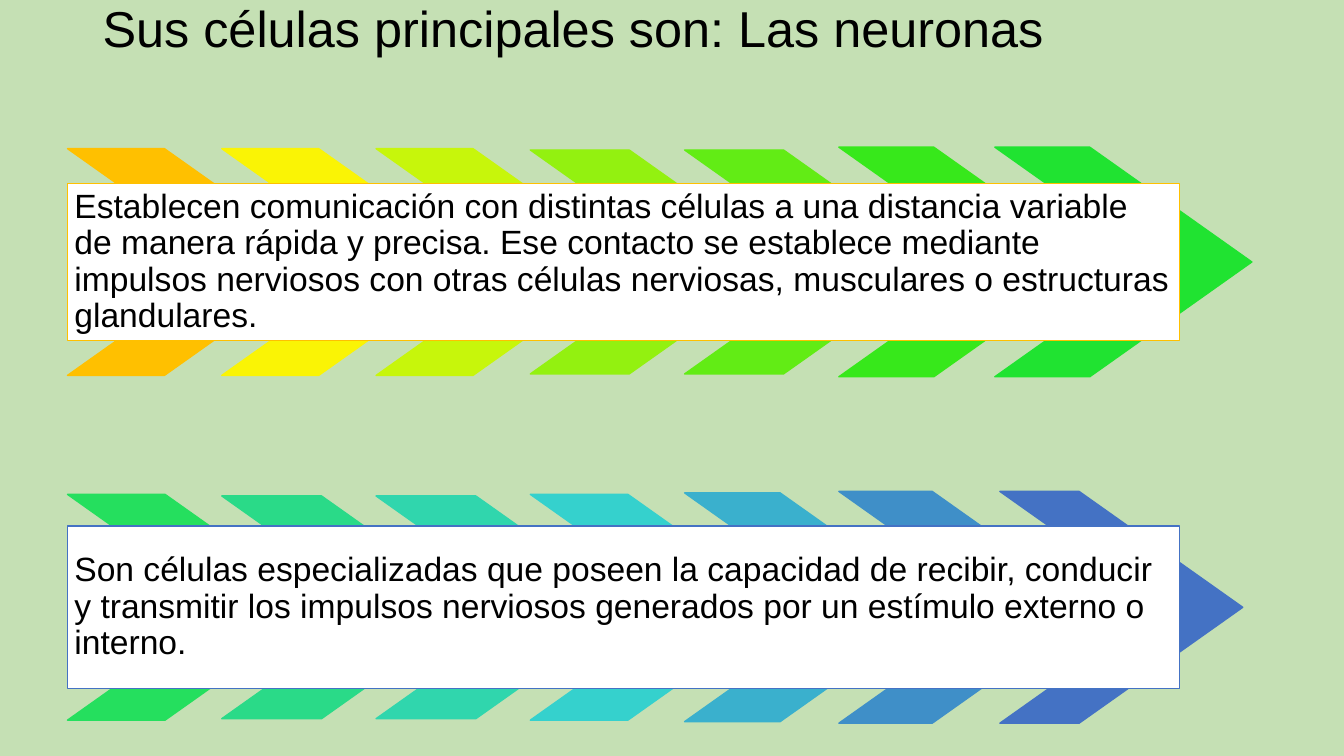
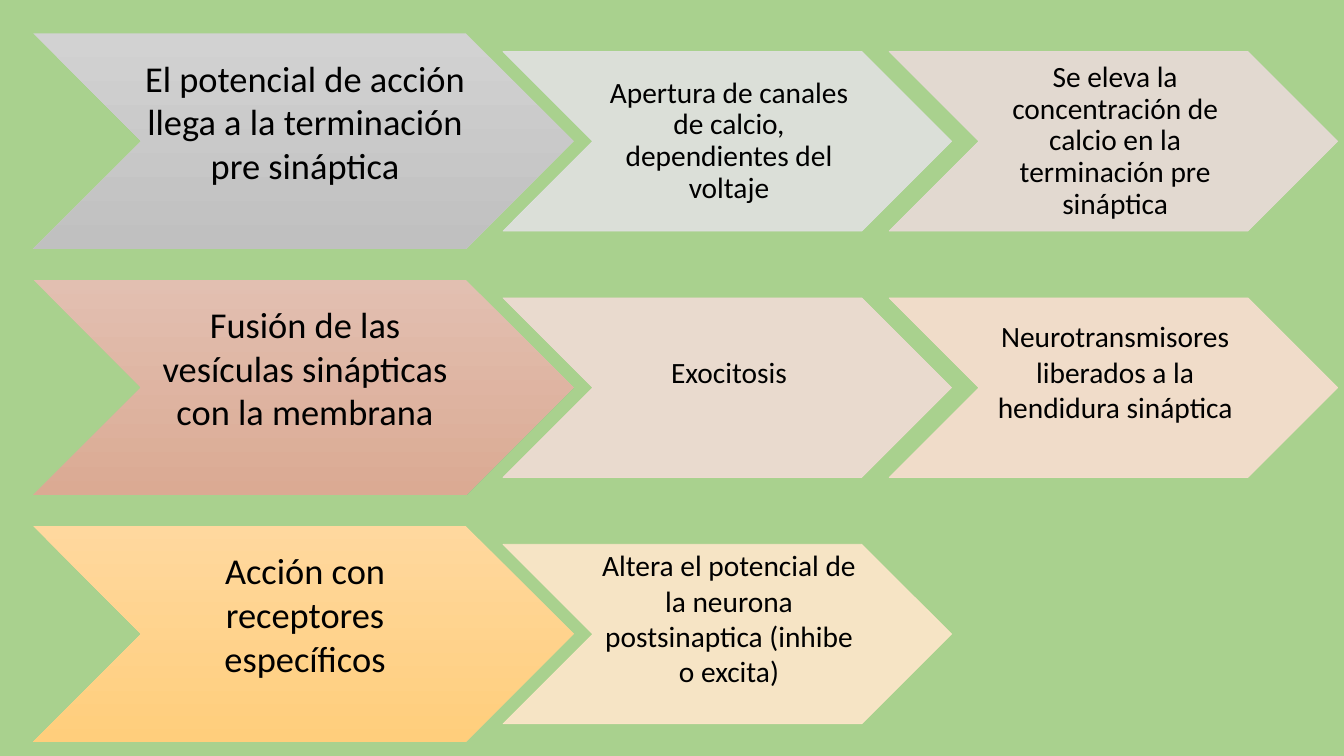
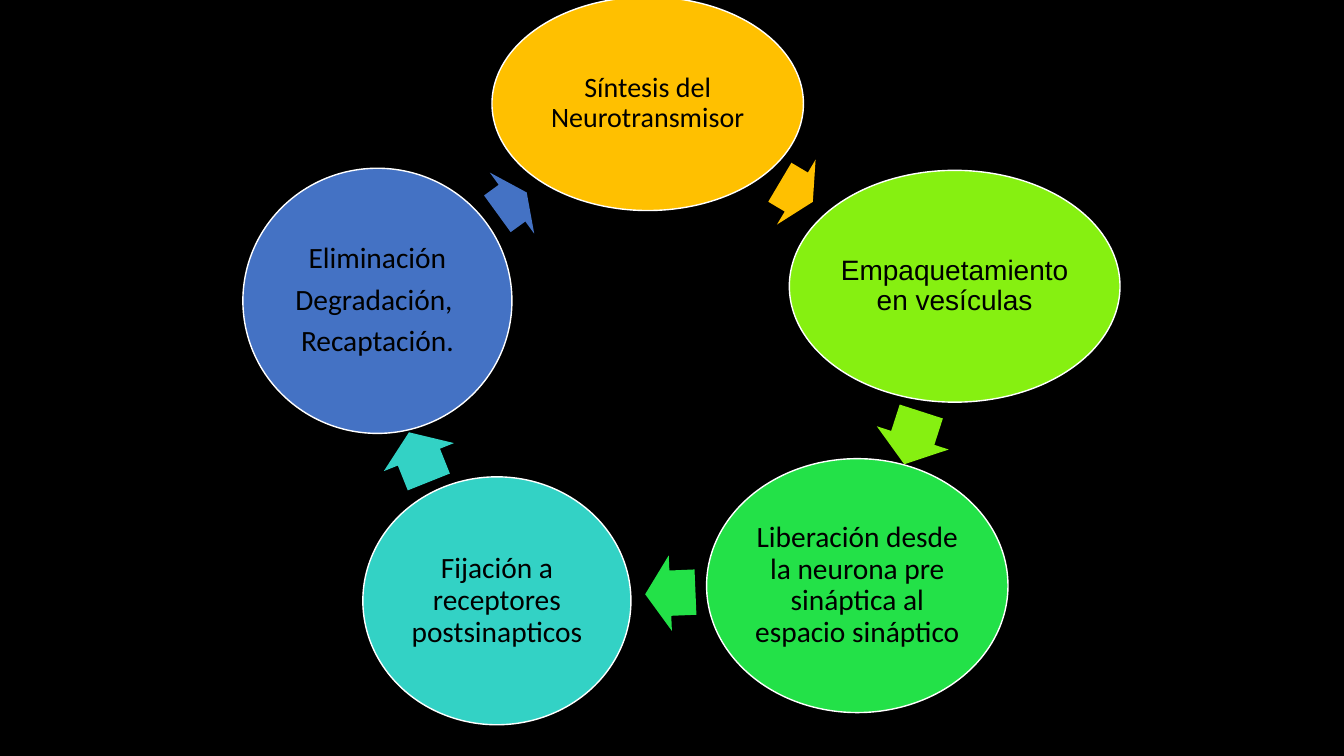
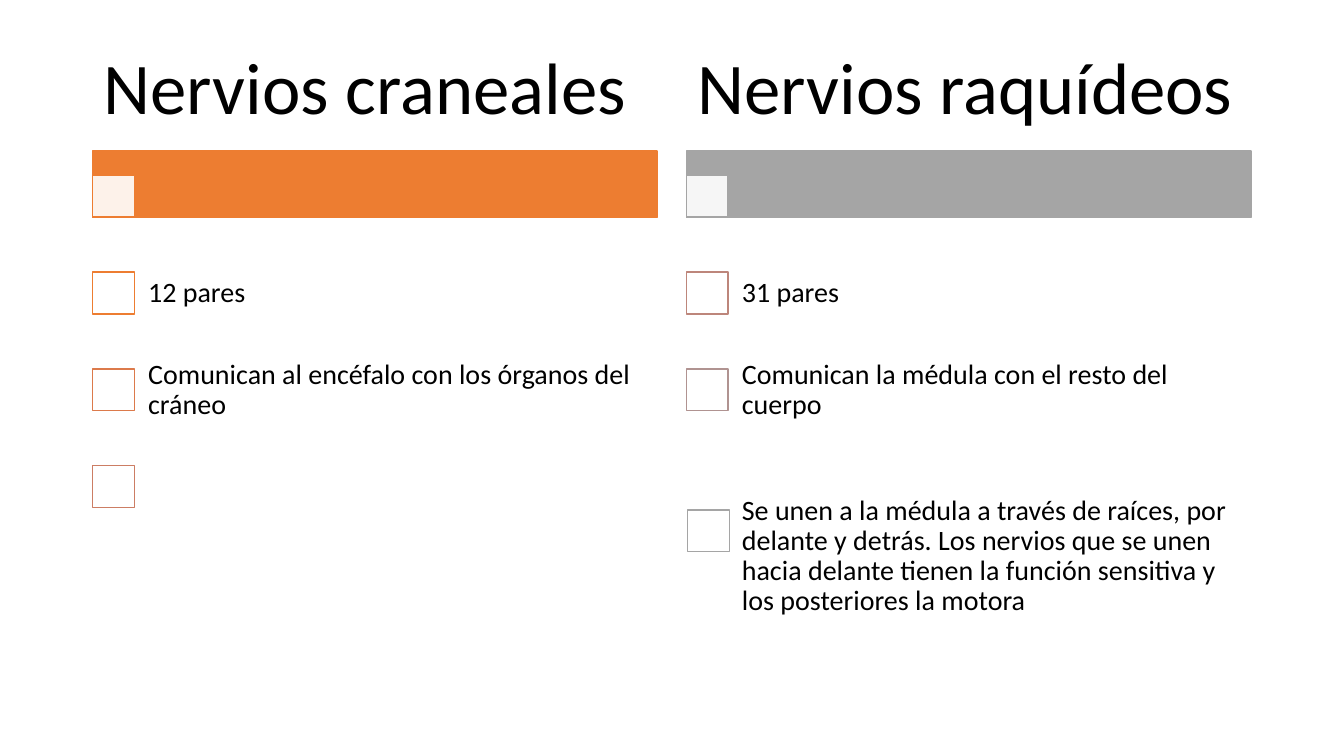
from dataclasses import dataclass
from typing import Optional

from pptx import Presentation
from pptx.dml.color import RGBColor
from pptx.enum.shapes import MSO_SHAPE as Preset
from pptx.enum.text import MSO_ANCHOR as Anchor, PP_ALIGN as Align
from pptx.oxml.ns import qn
from pptx.shapes.autoshape import Shape
from pptx.slide import Slide
from pptx.util import Pt


@dataclass(frozen=True)
class Theme:
    sans: str = "Arial"
    body: str = "Calibri"
    ink: str = "000000"
    paper: str = "FFFFFF"
    pale_green: str = "C5E0B4"
    green: str = "A9D18E"
    amber: str = "FFC000"
    blue: str = "4472C4"
    orange: str = "ED7D31"
    grey: str = "A5A5A5"
    heading: float = 52
    title: float = 36
    step: float = 26
    statement: float = 24
    detail: float = 21
    note: float = 20
    tight: float = 0.9


T = Theme()


@dataclass(frozen=True)
class Box:
    x: float
    y: float
    w: float
    h: float


@dataclass(frozen=True)
class Statement:
    text: str
    box: Box
    line: str
    colours: tuple[str, ...]
    heights: tuple[float, ...]
    last_x: float
    last_w: float


@dataclass(frozen=True)
class Step:
    text: str
    colour: str
    colour_end: Optional[str] = None
    raised: bool = True


@dataclass(frozen=True)
class Stage:
    lines: tuple[str, ...]
    colour: str
    oval: Box
    arrow: Box
    turn: float
    size: float = T.detail
    font: str = T.body


@dataclass(frozen=True)
class Item:
    text: str
    line: str
    check_y: float
    text_y: float
    text_h: float = 69.1
    dx: float = 0


@dataclass(frozen=True)
class NerveColumn:
    title: str
    colour: str
    x: float
    items: tuple[Item, ...]


STATEMENTS = (
    Statement(
        "Establecen comunicación con distintas células a una distancia variable de manera "
        "rápida y precisa. Ese contacto se establece mediante impulsos nerviosos con otras "
        "células nerviosas, musculares o estructuras glandulares.",
        Box(48.2, 131, 794.2, 112.3), T.amber,
        (T.amber, "FAF405", "C7F60B", "93F110", "62EC15", "37E81B", "20E331"),
        (162, 162, 162, 160, 160, 164, 164), 710.6, 183.6),
    Statement(
        "Son células especializadas que poseen la capacidad de recibir, conducir y transmitir "
        "los impulsos nerviosos generados por un estímulo externo o interno.",
        Box(48.2, 375.8, 794.2, 116), T.blue,
        ("25DF5E", "2ADA88", "30D6AD", "35D1CD", "3AB0CD", "3F8FC8", T.blue),
        (161.3, 159.1, 159.1, 161.3, 163.4, 165.6, 165.6), 714.2, 173.5),
)

STEP_ROWS = (
    (Step("El potencial de acción llega a la terminación pre sináptica", "D2D2D2", "C0C0C0"),
     Step("Apertura de canales de calcio, dependientes del voltaje", "E1E1E1", raised=False),
     Step("Se eleva la concentración de calcio en la terminación pre sináptica", "E9DAD8",
          raised=False)),
    (Step("Fusión de las vesículas sinápticas con la membrana", "E2BFB1", "DBAA93"),
     Step("Exocitosis", "F1DBD5"),
     Step("Neurotransmisores liberados a la hendidura sináptica", "F8DED0")),
    (Step("Acción con receptores específicos", "FFD89E", "FFCE7C"),
     Step("Altera el potencial de la neurona postsinaptica (inhibe o excita)", "FFE7CB")),
)

STAGES = (
    Stage(("Síntesis del Neurotransmisor",), T.amber, Box(351.4, -2.2, 222.5, 152.6),
          Box(555.1, 110.2, 27.4, 54), 30.7, T.note),
    Stage(("Empaquetamiento en vesículas",), "86F011", Box(563.8, 121.7, 236.2, 165.6),
          Box(632.2, 285.8, 39.6, 54), 107.9, T.note, T.sans),
    Stage(("Liberación desde la neurona pre sináptica al espacio sináptico ",), "23E148",
          Box(504.7, 327.6, 215.3, 181.4), Box(460.8, 396.7, 36, 54), 177.6),
    Stage(("Fijación a receptores postsinapticos",), "33D2C5", Box(259.2, 340.6, 191.5, 177.1),
          Box(280.1, 299.5, 38.2, 54), 248.2),
    Stage(("Eliminación", "Degradación, ", "Recaptación."), T.blue,
          Box(173.5, 120.2, 192.2, 189.4), Box(352.8, 118.1, 25.9, 54), 324),
)

NERVES = (
    NerveColumn("Nervios craneales", T.orange, 66.2, (
        Item("12 pares", T.orange, 194.4, 175),
        Item("Comunican al encéfalo con los órganos del cráneo", "DC7A4B", 263.5, 244.1),
        Item("", "CC7D64", 332.6, 313.2))),
    NerveColumn("Nervios raquídeos", T.grey, 490.3, (
        Item("31 pares", "BD867B", 194.4, 175),
        Item("Comunican la médula con el resto del cuerpo", "B09391", 263.5, 244.1),
        Item("Se unen a la médula a través de raíces, por delante y detrás. Los nervios que se "
             "unen hacia delante tienen la función sensitiva y los posteriores la motora",
             T.grey, 364.3, 313.2, 168.5, 0.9))),
)


def rgb(colour: str) -> RGBColor:
    return RGBColor.from_string(colour)


def add_slide(prs: Presentation, colour: str) -> Slide:
    s = prs.slides.add_slide(prs.slide_layouts[6])
    s.background.fill.solid()
    s.background.fill.fore_color.rgb = rgb(colour)
    return s


def add_shape(s: Slide, preset: Preset, box: Box, fill: str, line: Optional[str] = None,
              width: float = 1, adj: tuple[float, ...] = ()) -> Shape:
    sp = s.shapes.add_shape(preset, Pt(box.x), Pt(box.y), Pt(box.w), Pt(box.h))
    sp.shadow.inherit = False
    sp.fill.solid()
    sp.fill.fore_color.rgb = rgb(fill)
    if line:
        sp.line.color.rgb = rgb(line)
        sp.line.width = Pt(width)
    else:
        sp.line.fill.background()
    for i, value in enumerate(adj):
        sp.adjustments[i] = value
    return sp


def fade(sp: Shape, colours: str) -> None:
    """Make the colours found by an XPath in the shape properties 90% opaque."""
    for colour in sp._element.spPr.xpath(colours):
        colour.makeelement(qn("a:alpha"))
        alpha = colour.makeelement(qn("a:alpha"), {"val": "90000"})
        colour.append(alpha)


def set_text(sp: Shape, *lines: str, size: float, font: str = T.body,
             align: Align = Align.LEFT, anchor: Anchor = Anchor.MIDDLE,
             spacing: float = T.tight, after: float = 0,
             insets: tuple[float, float, float, float] = (0, 0, 0, 0)) -> None:
    """Fill a shape with one paragraph per line; insets run left, top, right, bottom."""
    tf = sp.text_frame
    tf.word_wrap = True
    tf.vertical_anchor = anchor
    tf.margin_left, tf.margin_top, tf.margin_right, tf.margin_bottom = map(Pt, insets)
    for i, line in enumerate(lines):
        p = tf.paragraphs[0] if i == 0 else tf.add_paragraph()
        p.alignment = align
        p.line_spacing = spacing
        p.space_after = Pt(after)
        r = p.add_run()
        r.text = line
        r.font.size = Pt(size)
        r.font.name = font
        r.font.color.rgb = rgb(T.ink)


def add_text(s: Slide, box: Box, text: str, **style) -> None:
    sp = s.shapes.add_textbox(Pt(box.x), Pt(box.y), Pt(box.w), Pt(box.h))
    set_text(sp, text, **style)


def draw_statement(s: Slide, st: Statement) -> None:
    """Draw a row of chevrons with a text panel over it."""
    middle = st.box.y + st.box.h / 2
    last = len(st.colours) - 1
    for i, (colour, h) in enumerate(zip(st.colours, st.heights)):
        x, w = (st.last_x, st.last_w) if i == last else (48.2 + 110.2 * i, 183.6)
        add_shape(s, Preset.CHEVRON, Box(x, middle - h / 2, w, h), colour, colour, adj=(0.706,))
    panel = add_shape(s, Preset.RECTANGLE, st.box, T.paper, st.line)
    set_text(panel, st.text, size=T.statement, font=T.sans, insets=(5, 5, 5, 5))


def draw_step(s: Slide, step: Step, row: int, col: int) -> None:
    """Draw one chevron of the process; the first of a row is larger and shaded."""
    top = 23.8 + 176 * row
    size = T.detail if col else T.step
    if col:
        box = Box(359.3 + 275.8 * (col - 1), top + 13, 320.4, 128.2)
        sp = add_shape(s, Preset.CHEVRON, box, step.colour, step.colour, width=0.5)
        fade(sp, ".//a:srgbClr")
    else:
        sp = add_shape(s, Preset.CHEVRON, Box(23.8, top, 385.9, 154.1), step.colour)
        sp.fill.gradient()
        sp.fill.gradient_angle = 270
        for stop, colour in zip(sp.fill.gradient_stops, (step.colour, step.colour_end)):
            stop.color.rgb = rgb(colour)
    lift = size * 1.1 if step.raised else 0
    set_text(sp, step.text, size=size, align=Align.CENTER,
             spacing=1 if step.raised else T.tight, insets=(2.5, 1, 0, 1 + lift))


def draw_stage(s: Slide, stage: Stage) -> None:
    oval = add_shape(s, Preset.OVAL, stage.oval, stage.colour, T.paper)
    set_text(oval, *stage.lines, size=stage.size, font=stage.font, align=Align.CENTER,
             after=7, insets=(2, 2, 2, 2))
    arrow = add_shape(s, Preset.RIGHT_ARROW, stage.arrow, stage.colour, adj=(0.6, 0.5))
    arrow.rotation = stage.turn


def draw_nerves(s: Slide, col: NerveColumn) -> None:
    side = 29.8
    add_shape(s, Preset.RECTANGLE, Box(col.x, 108, 403.2, 47.5), col.colour, col.colour)
    check = add_shape(s, Preset.RECTANGLE, Box(col.x, 125.3, side, side), T.paper, col.colour)
    fade(check, "a:solidFill/a:srgbClr")
    add_text(s, Box(col.x, 22.3, 403.2, 85), col.title, size=T.heading, insets=(8, 5, 8, 5))
    for item in col.items:
        add_shape(s, Preset.RECTANGLE, Box(col.x + item.dx, item.check_y, side, side),
                  T.paper, item.line)
        if item.text:
            add_text(s, Box(col.x + 28.1, item.text_y, 375.1, item.text_h), item.text,
                     size=T.note, insets=(11.5, 11.5, 11.5, 11.5))


def main() -> None:
    prs = Presentation()
    prs.slide_width, prs.slide_height = Pt(960), Pt(540)

    s = add_slide(prs, T.pale_green)
    add_text(s, Box(66.2, 0, 828, 87), "Sus células principales son: Las neuronas",
             size=T.title, font=T.sans, anchor=Anchor.TOP, insets=(7.2, 3, 7.2, 3))
    for statement in STATEMENTS:
        draw_statement(s, statement)

    s = add_slide(prs, T.green)
    for row, steps in enumerate(STEP_ROWS):
        for col, step in enumerate(steps):
            draw_step(s, step, row, col)

    s = add_slide(prs, T.ink)
    for stage in STAGES:
        draw_stage(s, stage)

    s = add_slide(prs, T.paper)
    for column in NERVES:
        draw_nerves(s, column)

    prs.save("out.pptx")


if __name__ == "__main__":
    main()
